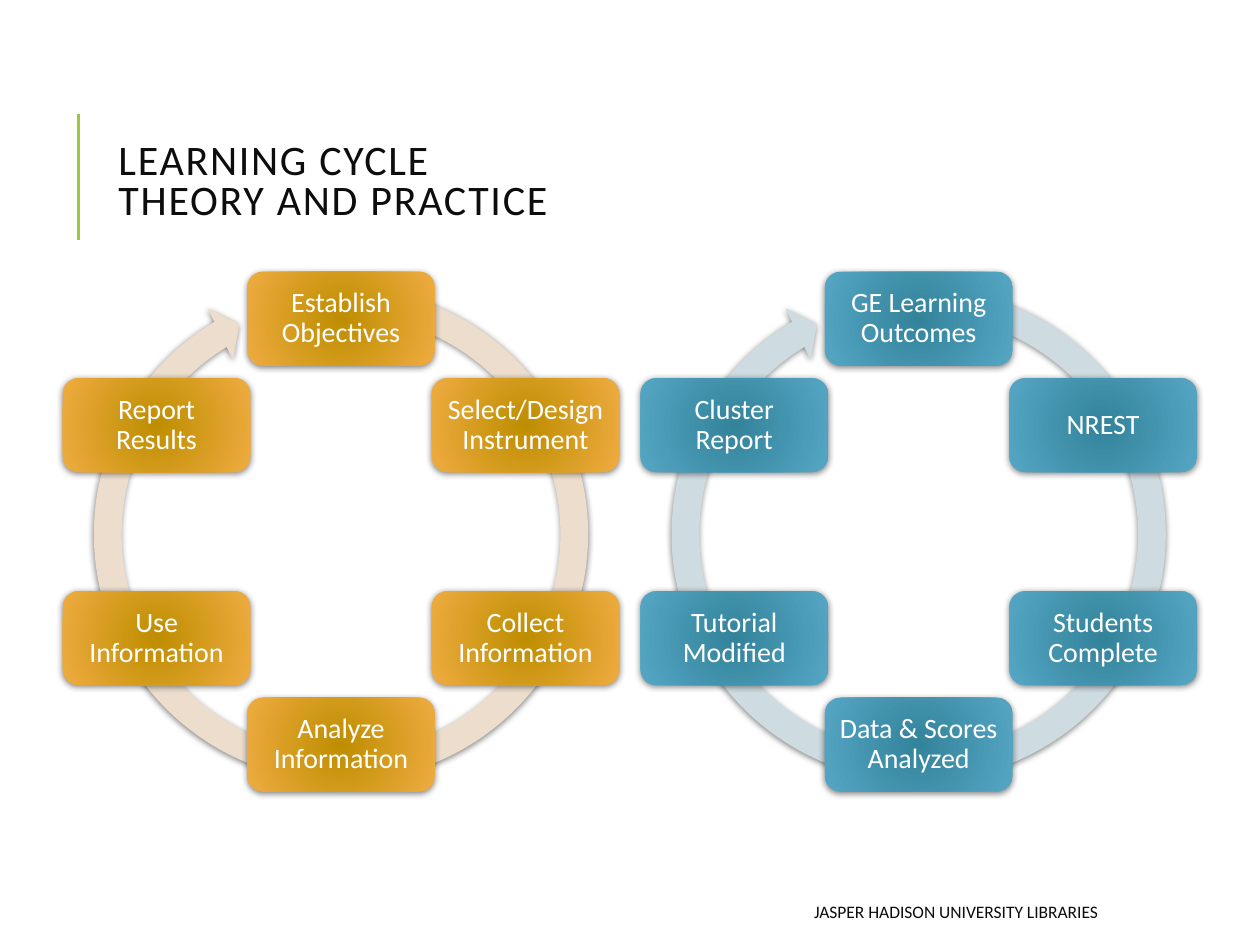
from math import cos, radians, sin

from lxml.etree import SubElement
from pptx import Presentation
from pptx.dml.color import RGBColor as RGB
from pptx.enum.shapes import MSO_CONNECTOR as CONN, MSO_SHAPE as SHAPE
from pptx.enum.text import MSO_ANCHOR as ANCHOR, PP_ALIGN as ALIGN
from pptx.oxml.ns import qn
from pptx.util import Pt

FONT = "Calibri"
COLORS = {
    "ink": "0D0D0D", "white": "FFFFFF", "rule": "99CB38", "shadow": "000000",
    "gold_ring": "ECDDCC", "gold_core": "BE8D00", "gold_edge": "EFAC41",
    "teal_ring": "CEDBE1", "teal_core": "33839B", "teal_edge": "55A6C4",
}
CENTER_Y, RADIUS = 303.8, 121.7
BOX_W, BOX_H = 107.3, 53.6
RING_SIZE, RING_TOP = 299.5, 155.5
RING_ADJ = (0.053, 3.126, 143.34, 170.66, 0.055)
CYCLES = [
    (194.9, "gold", ["Establish Objectives", "Select/Design Instrument",
                     "Collect Information", "Analyze Information",
                     "Use Information", "Report Results"]),
    (525, "teal", ["GE Learning Outcomes", "NREST", "Students Complete",
                   "Data & Scores Analyzed", "Tutorial Modified",
                   "Cluster Report"]),
]


def rgb(name):
    """Return the named colour."""
    return RGB.from_string(COLORS[name])


def write(tf, text, size, color, align, spacing=1.0):
    """Put one formatted paragraph into a text frame."""
    tf.text = text
    tf.word_wrap = True
    tf.vertical_anchor = ANCHOR.MIDDLE
    p = tf.paragraphs[0]
    p.alignment = align
    p.line_spacing = spacing
    for r in p.runs:
        r.font.name = FONT
        r.font.size = Pt(size)
        r.font.color.rgb = rgb(color)


def add_shadow(sp):
    """Give a shape a soft shadow just below it."""
    sp.shadow.inherit = False
    effects = sp._element.spPr.find(qn("a:effectLst"))
    shadow = SubElement(effects, qn("a:outerShdw"), blurRad=str(Pt(4)),
                        dist=str(Pt(1)), dir="5400000", rotWithShape="0")
    color = SubElement(shadow, qn("a:srgbClr"), val=COLORS["shadow"])
    SubElement(color, qn("a:alpha"), val="50000")


def fill_radial(sp, core, edge):
    """Fill a shape with a gradient from its centre outwards."""
    sp.fill.gradient()
    for stop, name, position in zip(sp.fill.gradient_stops, (core, edge), (0, 1)):
        stop.color.rgb = rgb(name)
        stop.position = position
    grad = sp._element.spPr.find(qn("a:gradFill"))
    grad.remove(grad.find(qn("a:lin")))
    circle = SubElement(grad, qn("a:path"), path="circle")
    SubElement(circle, qn("a:fillToRect"), {side: "100000" for side in "ltrb"})


def add_ring(group, center_x, theme):
    """Add the circular arrow behind the steps."""
    sp = group.shapes.add_shape(SHAPE.CIRCULAR_ARROW, Pt(center_x - RING_SIZE / 2),
                                Pt(RING_TOP), Pt(RING_SIZE), Pt(RING_SIZE))
    for i, value in enumerate(RING_ADJ):
        sp.adjustments[i] = value
    sp.fill.solid()
    sp.fill.fore_color.rgb = rgb(f"{theme}_ring")
    sp.line.fill.background()
    add_shadow(sp)


def add_step(group, x, y, text, theme):
    """Add one rounded step box centred on a point."""
    sp = group.shapes.add_shape(SHAPE.ROUNDED_RECTANGLE, Pt(x - BOX_W / 2),
                                Pt(y - BOX_H / 2), Pt(BOX_W), Pt(BOX_H))
    fill_radial(sp, f"{theme}_core", f"{theme}_edge")
    sp.line.fill.background()
    add_shadow(sp)
    tf = sp.text_frame
    tf.margin_left = tf.margin_right = tf.margin_top = tf.margin_bottom = Pt(5)
    write(tf, text, 16, "white", ALIGN.CENTER, 0.9)


def add_cycle(s, center_x, theme, steps):
    """Add a ring with its steps spread clockwise from the top."""
    group = s.shapes.add_group_shape()
    add_ring(group, center_x, theme)
    for i, text in enumerate(steps):
        angle = radians(360 / len(steps) * i - 90)
        add_step(group, center_x + RADIUS * cos(angle),
                 CENTER_Y + RADIUS * sin(angle), text, theme)


def add_title(s, text):
    """Place and format the title with the rule at its left."""
    title = s.shapes.title
    title.left, title.top, title.width, title.height = Pt(60.5), Pt(46), Pt(574), Pt(118)
    write(title.text_frame, text, 24, "ink", ALIGN.LEFT, 0.8)
    for r in title.text_frame.paragraphs[0].runs:
        r.font._element.set("spc", "100")
    rule = s.shapes.add_connector(CONN.STRAIGHT, Pt(44.8), Pt(137), Pt(44.8), Pt(65))
    rule.line.color.rgb = rgb("rule")
    rule.line.width = Pt(1.5)
    SubElement(rule._element.spPr, qn("a:effectLst"))


def add_footer(s, text):
    """Add the right-aligned footer line."""
    box = s.shapes.add_textbox(Pt(286), Pt(510), Pt(348.5), Pt(21.6))
    write(box.text_frame, text, 10, "ink", ALIGN.RIGHT)


def main():
    """Build the slide and save it."""
    prs = Presentation()
    prs.slide_width, prs.slide_height = Pt(720), Pt(540)
    s = prs.slides.add_slide(prs.slide_layouts[5])
    add_title(s, "LEARNING CYCLE\vTHEORY AND PRACTICE")
    for center_x, theme, steps in CYCLES:
        add_cycle(s, center_x, theme, steps)
    add_footer(s, "JASPER HADISON UNIVERSITY LIBRARIES")
    prs.save("out.pptx")


if __name__ == "__main__":
    main()
